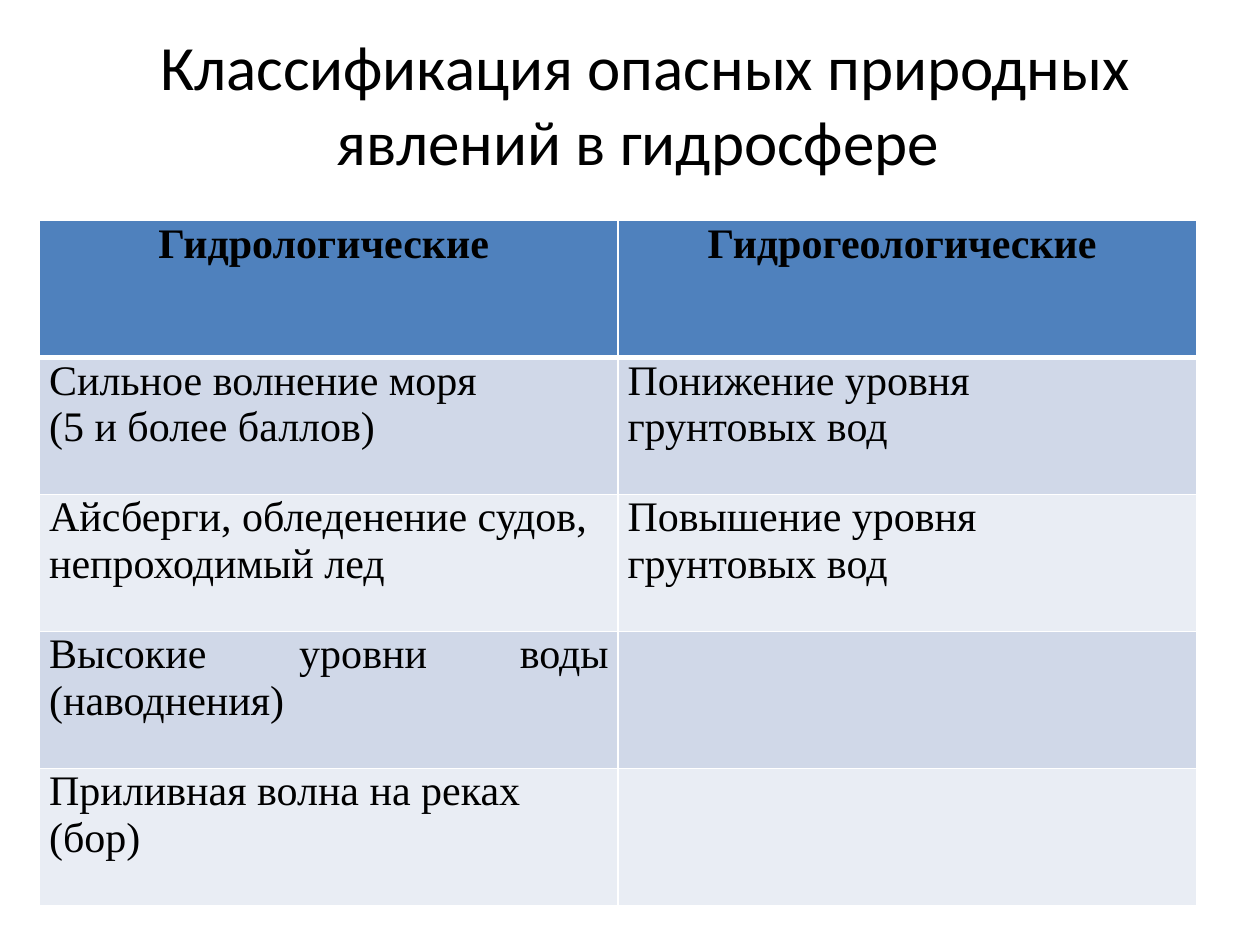
from lxml.etree import SubElement
from pptx import Presentation
from pptx.dml.color import RGBColor
from pptx.enum.text import MSO_ANCHOR as Anchor, PP_ALIGN as Align
from pptx.oxml.ns import qn
from pptx.util import Cm, Pt


def add_run(paragraph, text, font, size, bold=False):
    run = paragraph.add_run()
    run.text = text
    run.font.name = font
    run.font.size = Pt(size)
    run.font.bold = bold
    run.font.color.rgb = RGBColor.from_string("000000")


def add_border(cell, side, width, color="FFFFFF"):
    line = SubElement(cell._tc.get_or_add_tcPr(), qn(f"a:{side}"), w=str(Pt(width)))
    SubElement(SubElement(line, qn("a:solidFill")), qn("a:srgbClr"), val=color)


prs = Presentation()
prs.slide_width, prs.slide_height = Cm(25.4), Cm(19.05)
slide = prs.slides.add_slide(prs.slide_layouts[5])

# Title
title = slide.shapes.title
title.left, title.top, title.width, title.height = Cm(1.2), Cm(0.76), Cm(23.62), Cm(2.62)
title.text_frame.vertical_anchor = Anchor.MIDDLE
heading = title.text_frame.paragraphs[0]
heading.alignment = Align.CENTER
add_run(heading, "Классификация опасных природных явлений в гидросфере ", "Calibri", 36)

# Phenomena by class: each cell is a list of paragraphs
phenomena = [
    (["Гидрологические "], ["Гидрогеологические "]),
    (["Сильное волнение моря ", "(5 и более баллов) "],
     ["Понижение уровня ", "грунтовых вод "]),
    (["Айсберги, обледенение судов, ", "непроходимый лед "],
     ["Повышение уровня ", "грунтовых вод "]),
    (["Высокие уровни воды (наводнения) "], []),
    (["Приливная волна на реках ", "(бор)"], []),
]
table = slide.shapes.add_table(len(phenomena), 2, Cm(0.8), Cm(4.45),
                               Cm(23.32), Cm(13.8)).table

for row, columns in enumerate(phenomena):
    is_header = row == 0
    fill = "4F81BD" if is_header else ("E9EDF4", "D0D8E8")[row % 2]
    for column, lines in enumerate(columns):
        cell = table.cell(row, column)
        cell.margin_left = cell.margin_right = Cm(0.19)
        cell.margin_top = cell.margin_bottom = 0

        # White grid, thicker under the header
        add_border(cell, "lnL", 1)
        add_border(cell, "lnR", 1)
        add_border(cell, "lnT", 3 if row == 1 else 1)
        add_border(cell, "lnB", 3 if is_header else 1)
        cell.fill.solid()
        cell.fill.fore_color.rgb = RGBColor.from_string(fill)

        # Cell text
        for number, line in enumerate(lines):
            frame = cell.text_frame
            paragraph = frame.add_paragraph() if number else frame.paragraphs[0]
            paragraph.alignment = Align.CENTER if is_header else Align.JUSTIFY
            add_run(paragraph, line, "Times New Roman", 24, is_header)

prs.save("out.pptx")
